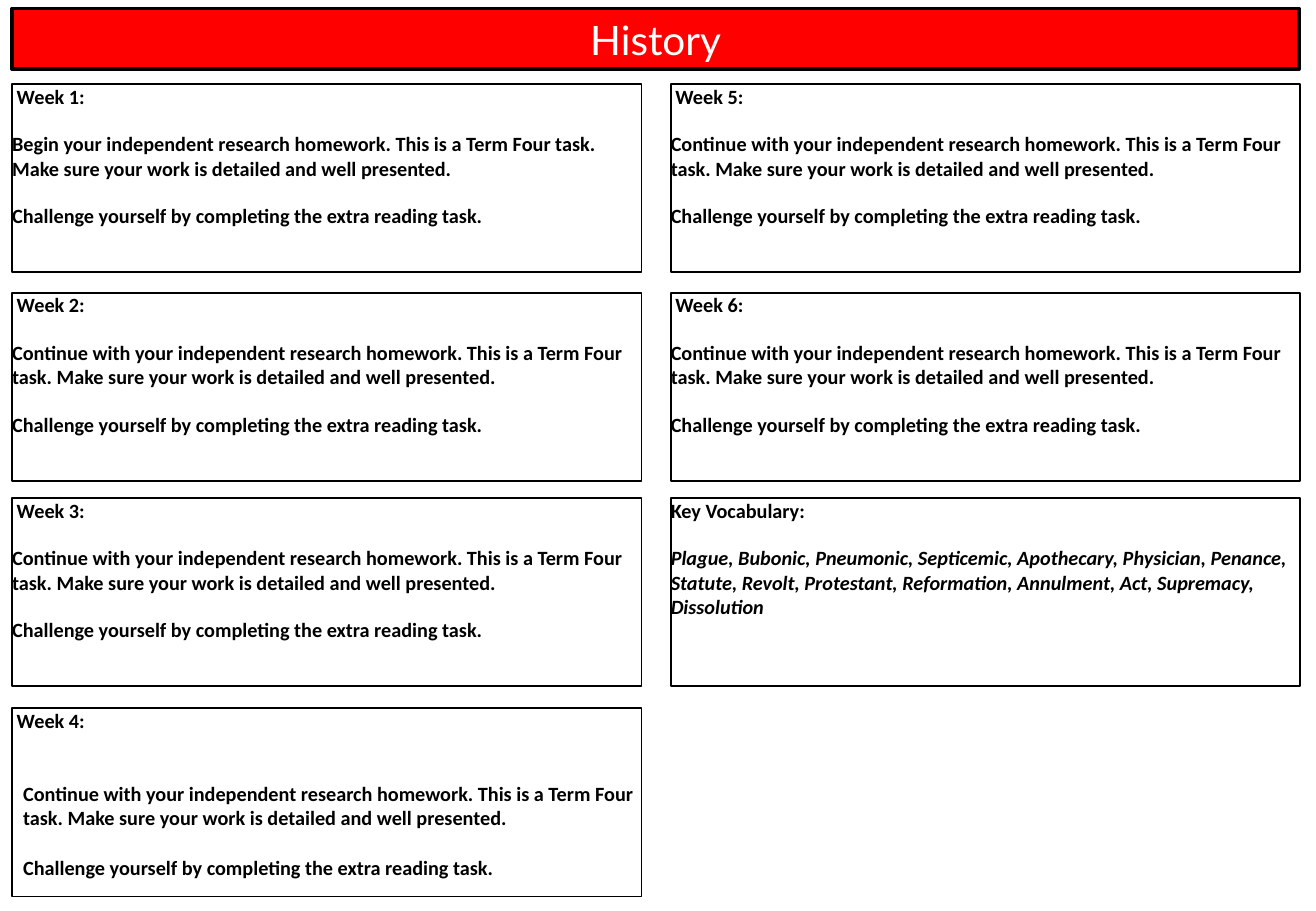
from pptx import Presentation
from pptx.dml.color import RGBColor
from pptx.enum.shapes import MSO_SHAPE
from pptx.enum.text import MSO_ANCHOR, PP_ALIGN
from pptx.util import Inches, Pt

RECTANGLE = MSO_SHAPE.RECTANGLE
TOP, MIDDLE = MSO_ANCHOR.TOP, MSO_ANCHOR.MIDDLE
LEFT, CENTER = PP_ALIGN.LEFT, PP_ALIGN.CENTER
BLACK = RGBColor(0x00, 0x00, 0x00)
WHITE = RGBColor(0xFF, 0xFF, 0xFF)
RED = RGBColor(0xFF, 0x00, 0x00)

# Content
SUBJECT = "History"
DETAIL = "This is a Term Four task. Make sure your work is detailed and well presented."
BEGIN = f"Begin your independent research homework. {DETAIL}"
CONTINUE = f"Continue with your independent research homework. {DETAIL}"
CHALLENGE = "Challenge yourself by completing the extra reading task."
VOCABULARY = (
    "Plague, Bubonic, Pneumonic, Septicemic, Apothecary, Physician, Penance, "
    "Statute, Revolt, Protestant, Reformation, Annulment, Act, Supremacy, Dissolution"
)
COLUMNS = [
    [
        (" Week 1:", BEGIN, CHALLENGE),
        (" Week 2:", CONTINUE, CHALLENGE),
        (" Week 3:", CONTINUE, CHALLENGE),
        (" Week 4:", CONTINUE, CHALLENGE),
    ],
    [
        (" Week 5:", CONTINUE, CHALLENGE),
        (" Week 6:", CONTINUE, CHALLENGE),
        ("Key Vocabulary:", VOCABULARY),
    ],
]

# Layout in inches, paragraph gaps in points
COLUMN_LEFTS = (0.1, 5.52)
ROW_TOPS = (0.69, 2.41, 4.1, 5.83)
CARD_WIDTH, CARD_HEIGHT = 5.18, 1.55
BANNER = (0.1, 0.07, 10.59, 0.5)
GAPS = (0, 13.9, 13.9)
WEEK_4_GAPS = (0, 28.8, 15.2)
WEEK_4_INDENT = 0.09

CARD_FONT = {"name": "Calibri", "size": Pt(12), "bold": True}
BANNER_FONT = {"name": "Lato", "size": Pt(24), "bold": False}


def add_box(slide, place, line_width, fill=None):
    box = slide.shapes.add_shape(RECTANGLE, *map(Inches, place))
    box.shadow.inherit = False
    if fill is None:
        box.fill.background()
    else:
        box.fill.solid()
        box.fill.fore_color.rgb = fill
    box.line.color.rgb = BLACK
    box.line.width = Pt(line_width)
    box.text_frame.word_wrap = True
    return box.text_frame


def write(paragraph, text, font, color, alignment):
    paragraph.text = text
    paragraph.alignment = alignment
    for name, value in font.items():
        setattr(paragraph.font, name, value)
    paragraph.font.color.rgb = color


def add_card(slide, place, texts):
    frame = add_box(slide, place, 1)
    frame.vertical_anchor = TOP
    for side in ("left", "top", "right", "bottom"):
        setattr(frame, f"margin_{side}", 0)
    is_week_4 = texts[0] == " Week 4:"
    gaps = WEEK_4_GAPS if is_week_4 else GAPS
    for number, (text, gap) in enumerate(zip(texts, gaps)):
        paragraph = frame.add_paragraph() if number else frame.paragraphs[0]
        write(paragraph, text, CARD_FONT, BLACK, LEFT)
        paragraph.font.italic = text == VOCABULARY
        if number:
            paragraph.space_before = Pt(gap)
            if is_week_4:
                paragraph._p.get_or_add_pPr().set("marL", str(Inches(WEEK_4_INDENT)))


def main():
    prs = Presentation()
    prs.slide_width, prs.slide_height = Inches(10.83), Inches(7.5)
    slide = prs.slides.add_slide(prs.slide_layouts[6])

    # Subject banner
    banner = add_box(slide, BANNER, 2.25, RED)
    banner.vertical_anchor = MIDDLE
    write(banner.paragraphs[0], SUBJECT, BANNER_FONT, WHITE, CENTER)

    # Homework cards
    for left, cards in zip(COLUMN_LEFTS, COLUMNS):
        for top, texts in zip(ROW_TOPS, cards):
            add_card(slide, (left, top, CARD_WIDTH, CARD_HEIGHT), texts)

    prs.save("out.pptx")


if __name__ == "__main__":
    main()
